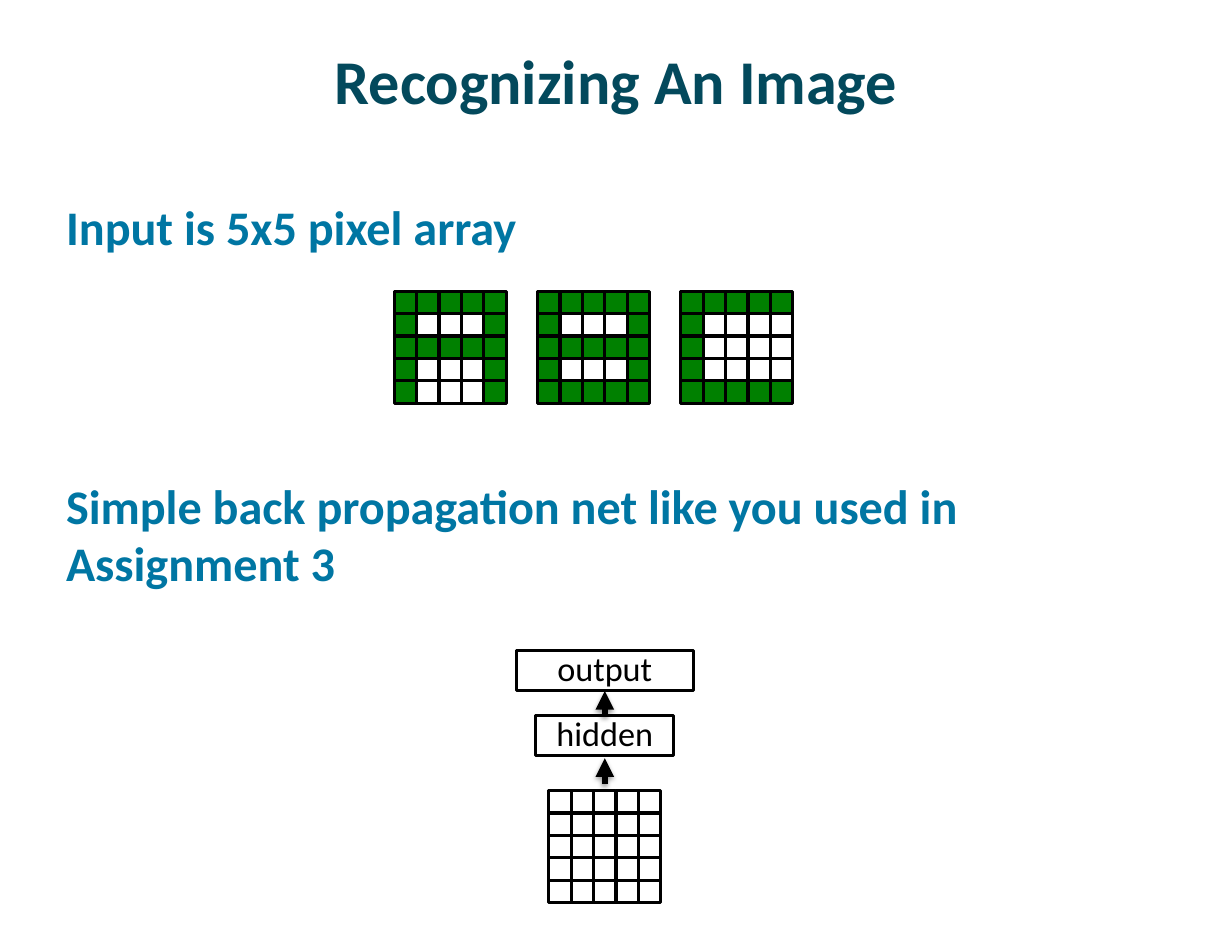
from lxml.etree import SubElement
from pptx import Presentation
from pptx.dml.color import RGBColor
from pptx.enum.shapes import MSO_CONNECTOR, MSO_SHAPE
from pptx.enum.text import MSO_ANCHOR, PP_ALIGN
from pptx.oxml import parse_xml
from pptx.oxml.ns import nsdecls, qn
from pptx.util import Inches, Pt

COLORS = {"title": "03495C", "body": "0076A3", "on": "008000", "off": "FFFFFF", "ink": "000000"}
CELL = 0.2
SIDE = 5
PITCH = 1.28
CENTER = 5.4
BOX_HEIGHT = 0.36
LETTERS = [
    ["#####", "#...#", "#####", "#...#", "#...#"],
    ["#####", "#...#", "#####", "#...#", "#####"],
    ["#####", "#....", "#....", "#....", "#####"],
]
INPUT = ["." * SIDE] * SIDE
TITLE = {"size": Pt(40), "bold": True}
BODY = {"size": Pt(31), "bold": True}
LABEL = {"size": Pt(22), "bold": False}


def rgb(name):
    return RGBColor.from_string(COLORS[name])


def apply(target, values):
    for name, value in values.items():
        setattr(target, name, value)


def write(p, text, font, color):
    r = p.add_run()
    r.text = text
    apply(r.font, {"name": "Calibri", **font})
    r.font.color.rgb = rgb(color)


def add_text(shapes, box, paragraphs, font, color, frame, layout):
    tf = shapes.add_textbox(*map(Inches, box)).text_frame
    apply(tf, {"word_wrap": True, "margin_top": Inches(0.06), "margin_bottom": Inches(0.06), **frame})
    for i, text in enumerate(paragraphs):
        p = tf.paragraphs[0] if i == 0 else tf.add_paragraph()
        apply(p, layout if i else {**layout, "space_before": Pt(0)})
        write(p, text, font, color)


def add_rect(shapes, box, fill):
    sp = shapes.add_shape(MSO_SHAPE.RECTANGLE, *map(Inches, box))
    sp.shadow.inherit = False
    sp.fill.solid()
    sp.fill.fore_color.rgb = rgb(fill)
    sp.line.color.rgb = rgb("ink")
    sp.line.width = Pt(2)
    return sp


def add_pixels(shapes, left, top, rows):
    group = shapes.add_group_shape()
    for y, row in enumerate(rows):
        for x, mark in enumerate(row):
            box = (left + x * CELL, top + y * CELL, CELL, CELL)
            add_rect(group.shapes, box, "on" if mark == "#" else "off")


def add_layer(shapes, text, top, width):
    sp = add_rect(shapes, (CENTER - width / 2, top, width, BOX_HEIGHT), "off")
    tf = sp.text_frame
    apply(tf, {"vertical_anchor": MSO_ANCHOR.MIDDLE, "margin_top": 0, "margin_bottom": 0})
    p = tf.paragraphs[0]
    apply(p, {"alignment": PP_ALIGN.CENTER, "line_spacing": 0.87})
    write(p, text, LABEL, "ink")
    return sp


def add_arrow(shapes, start, end):
    cx = shapes.add_connector(MSO_CONNECTOR.STRAIGHT, *map(Inches, (CENTER, start, CENTER, end)))
    cx.line.color.rgb = rgb("ink")
    cx.line.width = Pt(4)
    SubElement(cx.line._get_or_add_ln(), qn("a:tailEnd"), type="triangle")
    cx._element.spPr.append(parse_xml(
        f'<a:effectLst {nsdecls("a")}>'
        f'<a:outerShdw blurRad="{Pt(3.1)}" dist="{Pt(1.6)}" dir="5400000" rotWithShape="0">'
        f'<a:srgbClr val="{COLORS["ink"]}"><a:alpha val="38000"/></a:srgbClr>'
        '</a:outerShdw></a:effectLst>'))
    return cx


def main():
    prs = Presentation()
    apply(prs, {"slide_width": Inches(11), "slide_height": Inches(8.5)})
    s = prs.slides.add_slide(prs.slide_layouts[6])
    shapes = s.shapes

    add_text(shapes, (0.55, 0.19, 9.9, 1.04), ["Recognizing An Image"], TITLE, "title",
             {"vertical_anchor": MSO_ANCHOR.MIDDLE}, {"alignment": PP_ALIGN.CENTER})
    add_text(shapes, (0.37, 1.7, 10.08, 5.66),
             ["Input is 5x5 pixel array", "Simple back propagation net like you used in Assignment 3"],
             BODY, "body", {"margin_left": Inches(0.22), "margin_right": Inches(0.11)},
             {"space_before": Pt(142)})

    for i, rows in enumerate(LETTERS):
        add_pixels(shapes, 3.52 + i * PITCH, 2.6, rows)
    add_pixels(shapes, CENTER - SIDE * CELL / 2, 7.06, INPUT)

    add_arrow(shapes, 7, 6.77)
    hidden = add_layer(shapes, "hidden", 6.39, 1.23)
    output = add_layer(shapes, "output", 5.81, 1.58)
    link = add_arrow(shapes, 6.39, 6.17)
    link.begin_connect(hidden, 0)
    link.end_connect(output, 2)

    prs.save("out.pptx")


if __name__ == "__main__":
    main()
